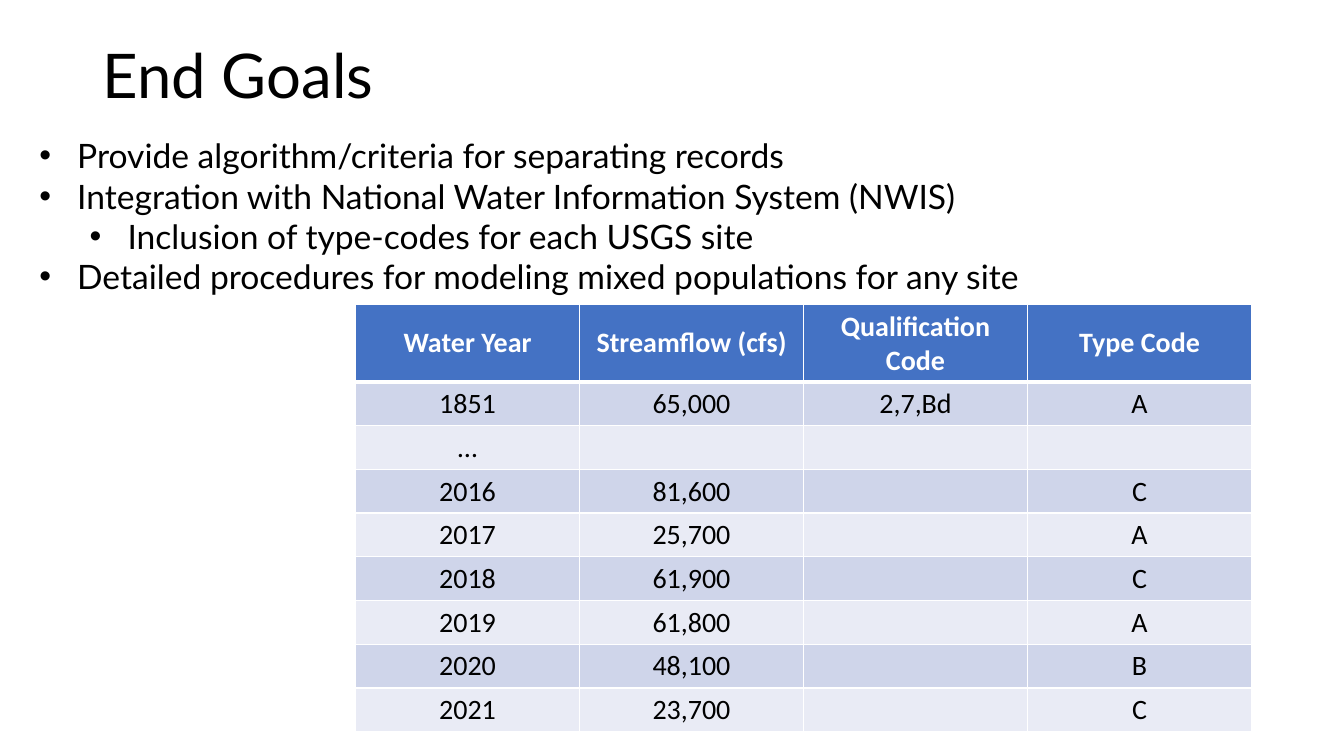
from dataclasses import dataclass

from lxml import etree
from pptx import Presentation
from pptx.dml.color import RGBColor
from pptx.enum.text import MSO_ANCHOR, PP_ALIGN
from pptx.oxml.ns import qn
from pptx.util import Pt

TOP, MIDDLE = MSO_ANCHOR.TOP, MSO_ANCHOR.MIDDLE
LEFT, CENTER = PP_ALIGN.LEFT, PP_ALIGN.CENTER
TITLE_ONLY = 5


@dataclass(frozen=True)
class Theme:
    text_font: str = "Lato"
    table_font: str = "Calibri"
    title_size: int = 44
    bullet_size: int = 24
    table_size: int = 20
    ink: str = "000000"
    white: str = "FFFFFF"
    header: str = "4472C4"
    bands: tuple = ("E9EBF5", "CFD5EA")


GOALS = [
    (0, "Provide algorithm/criteria for separating records"),
    (0, "Integration with National Water Information System (NWIS)"),
    (1, "Inclusion of type-codes for each USGS site"),
    (0, "Detailed procedures for modeling mixed populations for any site"),
]
STREAMFLOW_ROWS = [
    ("Water Year", "Streamflow (cfs)", "Qualification Code", "Type Code"),
    ("1851", "65,000", "2,7,Bd", "A"),
    ("…", "", "", ""),
    ("2016", "81,600", "", "C"),
    ("2017", "25,700", "", "A"),
    ("2018", "61,900", "", "C"),
    ("2019", "61,800", "", "A"),
    ("2020", "48,100", "", "B"),
    ("2021", "23,700", "", "C"),
]


class SlideBuilder:
    def __init__(self, presentation, theme):
        self.theme = theme
        self.slide = presentation.slides.add_slide(presentation.slide_layouts[TITLE_ONLY])

    def style(self, font, name, size, color, bold=False):
        font.name = name
        font.size = Pt(size)
        font.bold = bold
        font.color.rgb = RGBColor.from_string(color)

    def title(self, text, left, top, width, height):
        shape = self.slide.shapes.title
        shape.left, shape.top, shape.width, shape.height = map(Pt, (left, top, width, height))
        frame = shape.text_frame
        frame.text = text
        frame.word_wrap = True
        frame.vertical_anchor = TOP
        paragraph = frame.paragraphs[0]
        paragraph.alignment = LEFT
        paragraph.line_spacing = 0.9
        self.style(paragraph.runs[0].font, self.theme.text_font, self.theme.title_size, self.theme.ink)

    def bullets(self, items, left, top, width, height):
        frame = self.slide.shapes.add_textbox(*map(Pt, (left, top, width, height))).text_frame
        frame.word_wrap = True
        frame.text = "\n".join(text for _, text in items)
        for paragraph, (level, _) in zip(frame.paragraphs, items):
            paragraph.level = level
            properties = paragraph._p.get_or_add_pPr()
            properties.set("marL", str(Pt(27 + 36 * level)))
            properties.set("indent", str(Pt(-27)))
            etree.SubElement(properties, qn("a:buFont")).set("typeface", "Arial")
            etree.SubElement(properties, qn("a:buChar")).set("char", "•")
            self.style(paragraph.runs[0].font, self.theme.text_font, self.theme.bullet_size, self.theme.ink)

    def table(self, rows, left, top, column_width, row_height):
        count = len(rows[0])
        size = (column_width * count, row_height * len(rows))
        table = self.slide.shapes.add_table(len(rows), count, *map(Pt, (left, top, *size))).table
        for row_index, values in enumerate(rows):
            for column_index, text in enumerate(values):
                self.cell(table.cell(row_index, column_index), text, row_index)

    def cell(self, cell, text, row_index):
        theme = self.theme
        is_header = row_index == 0
        cell.text = text
        cell.vertical_anchor = MIDDLE
        paragraph = cell.text_frame.paragraphs[0]
        paragraph.alignment = CENTER
        color = theme.white if is_header else theme.ink
        for font in [run.font for run in paragraph.runs] or [paragraph.font]:
            self.style(font, theme.table_font, theme.table_size, color, is_header)
        self.borders(cell, top=3 if row_index == 1 else 1, bottom=3 if is_header else 1)
        cell.fill.solid()
        cell.fill.fore_color.rgb = RGBColor.from_string(theme.header if is_header else theme.bands[row_index % 2])

    def borders(self, cell, top, bottom):
        properties = cell._tc.get_or_add_tcPr()
        for side, width in (("L", 1), ("R", 1), ("T", top), ("B", bottom)):
            line = etree.SubElement(properties, qn(f"a:ln{side}"), w=str(Pt(width)))
            fill = etree.SubElement(line, qn("a:solidFill"))
            etree.SubElement(fill, qn("a:srgbClr"), val=self.theme.white)


def main():
    presentation = Presentation()
    presentation.slide_width, presentation.slide_height = Pt(960), Pt(540)
    builder = SlideBuilder(presentation, Theme())
    builder.title("End Goals", 66, 28.75, 828, 104.4)
    builder.bullets(GOALS, 21, 93, 918, 440.6)
    builder.table(STREAMFLOW_ROWS, left=254, top=217.5, column_width=160, row_height=29.2)
    presentation.save("out.pptx")


if __name__ == "__main__":
    main()
